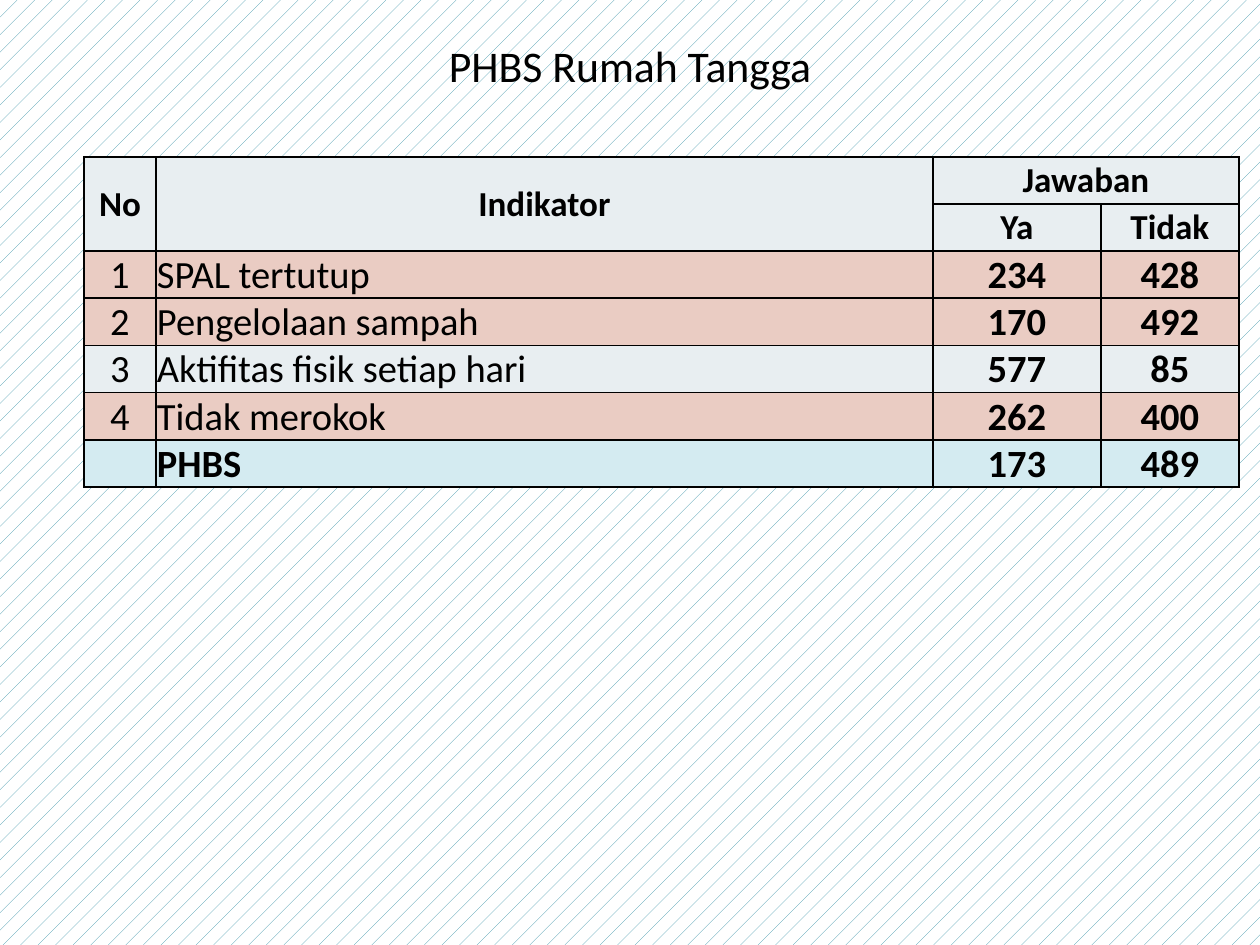
"""Build the PHBS Rumah Tangga slide with its indicator table."""
from lxml.etree import SubElement
from pptx import Presentation
from pptx.dml.color import RGBColor
from pptx.enum.dml import MSO_PATTERN as Pattern
from pptx.enum.text import MSO_ANCHOR as Anchor, PP_ALIGN as Align
from pptx.oxml.ns import qn
from pptx.util import Pt

PX = 914400 // 126
BLACK = RGBColor(0x00, 0x00, 0x00)
WHITE = RGBColor(0xFF, 0xFF, 0xFF)
TEAL = RGBColor(0x38, 0x91, 0xA7)
GREY = RGBColor(0xE8, 0xEE, 0xF1)
PINK = RGBColor(0xEA, 0xCC, 0xC3)
BLUE = RGBColor(0xD4, 0xEB, 0xF1)

TITLE = "PHBS Rumah Tangga"
HEADS = 2
ROWS = [
    (GREY, "No", "Indikator", "Jawaban", ""),
    (GREY, "", "", "Ya", "Tidak"),
    (PINK, "1", "SPAL tertutup", "234", "428"),
    (PINK, "2", "Pengelolaan sampah", "170", "492"),
    (GREY, "3", "Aktifitas fisik setiap hari", "577", "85"),
    (PINK, "4", "Tidak merokok", "262", "400"),
    (BLUE, "", "PHBS", "173", "489"),
]
SPANS = [((0, 0), (1, 0)), ((0, 1), (1, 1)), ((0, 2), (0, 3))]
COLS = [72, 777, 168, 138]
LEFT, TOP, HIGH = 84, 157, 47


def write(frame, text, size=22, bold=False, align=Align.CENTER):
    para = frame.paragraphs[0]
    para.alignment = align
    run = para.add_run()
    run.text = text
    font = run.font
    font.name, font.size, font.bold = "Calibri", Pt(size), bold
    font.color.rgb = BLACK


def edge(cell):
    props = cell._tc.get_or_add_tcPr()
    for side in ("a:lnL", "a:lnR", "a:lnT", "a:lnB"):
        line = SubElement(props, qn(side), w=str(Pt(1)))
        fill = SubElement(line, qn("a:solidFill"))
        SubElement(fill, qn("a:srgbClr"), val=str(BLACK))


def style(cell, color, anchor):
    edge(cell)
    cell.fill.solid()
    cell.fill.fore_color.rgb = color
    cell.margin_left = cell.margin_right = cell.margin_top = PX
    cell.margin_bottom = 0
    cell.vertical_anchor = anchor


def add_grid(slide):
    size = (sum(COLS) * PX, len(ROWS) * HIGH * PX)
    grid = slide.shapes.add_table(
        len(ROWS), len(COLS), LEFT * PX, TOP * PX, *size).table
    for col, wide in zip(grid.columns, COLS):
        col.width = wide * PX
    for row in grid.rows:
        row.height = HIGH * PX
    for first, last in SPANS:
        grid.cell(*first).merge(grid.cell(*last))
    for r, (color, *texts) in enumerate(ROWS):
        head = r < HEADS
        for c, text in enumerate(texts):
            cell = grid.cell(r, c)
            low = c == 2 and not head
            style(cell, color, Anchor.BOTTOM if low else Anchor.MIDDLE)
            if text:
                write(cell.text_frame, text, size=20 if head else 22,
                      bold=head or c > 1 or color == BLUE,
                      align=Align.LEFT if c == 1 and not head else Align.CENTER)


def main():
    deck = Presentation()
    deck.slide_width, deck.slide_height = 1260 * PX, 945 * PX
    slide = deck.slides.add_slide(deck.slide_layouts[6])
    back = slide.background.fill
    back.patterned()
    back.pattern = Pattern.PERCENT_5
    back.fore_color.rgb, back.back_color.rgb = TEAL, WHITE
    box = slide.shapes.add_textbox(63 * PX, 21 * PX, 1134 * PX, 88 * PX)
    frame = box.text_frame
    frame.word_wrap = True
    frame.vertical_anchor = Anchor.MIDDLE
    write(frame, TITLE, size=25)
    add_grid(slide)
    deck.save("out.pptx")


if __name__ == "__main__":
    main()
